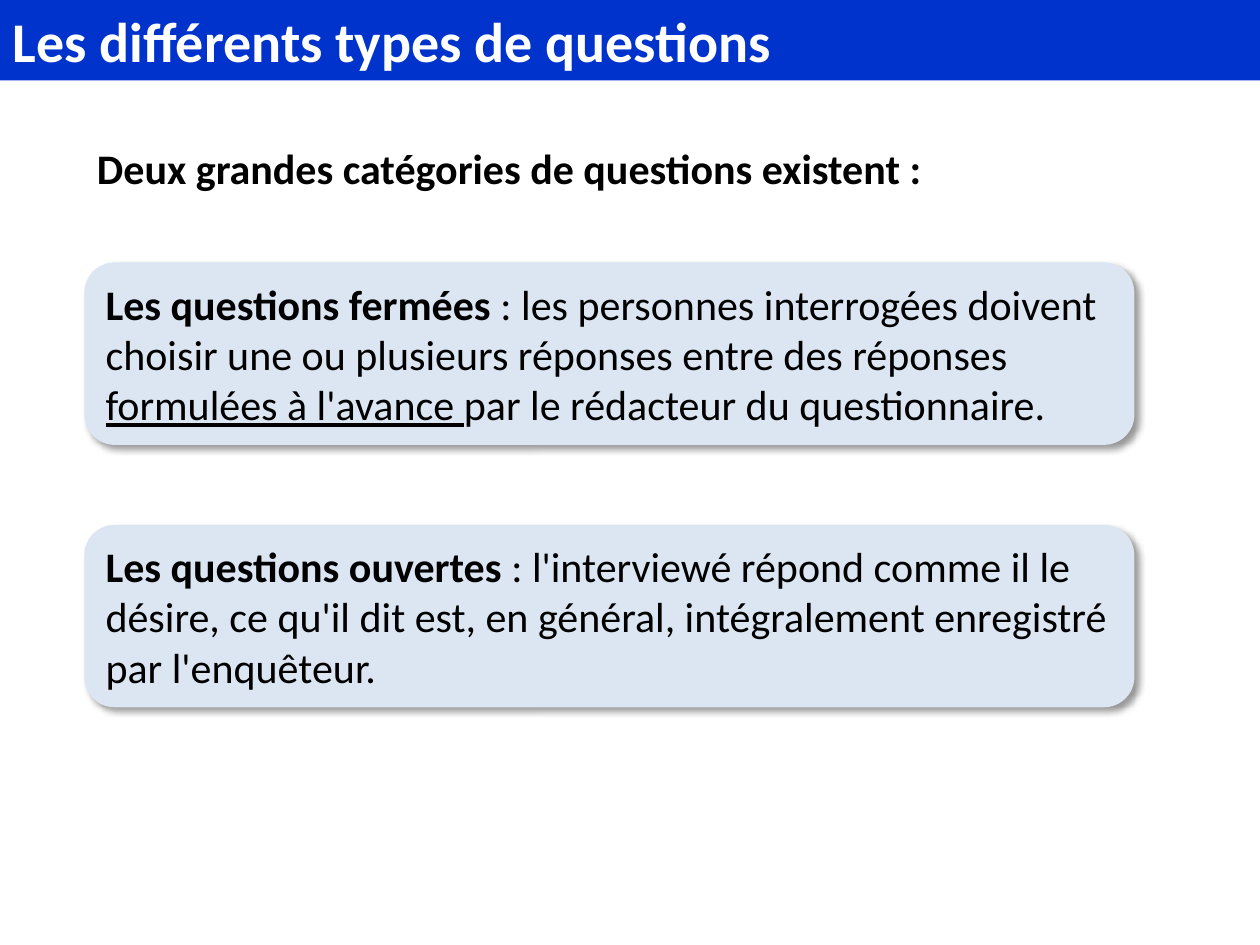
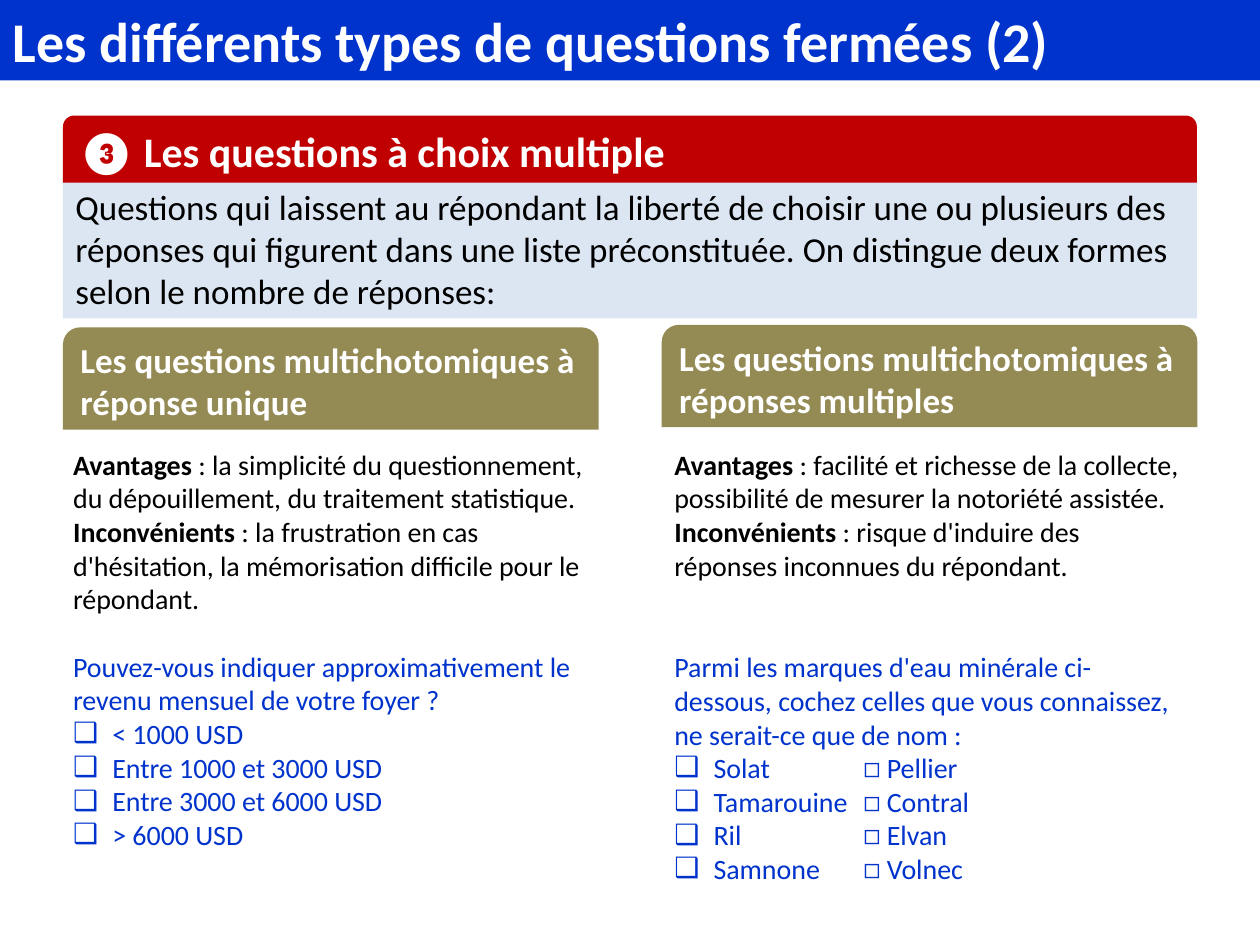
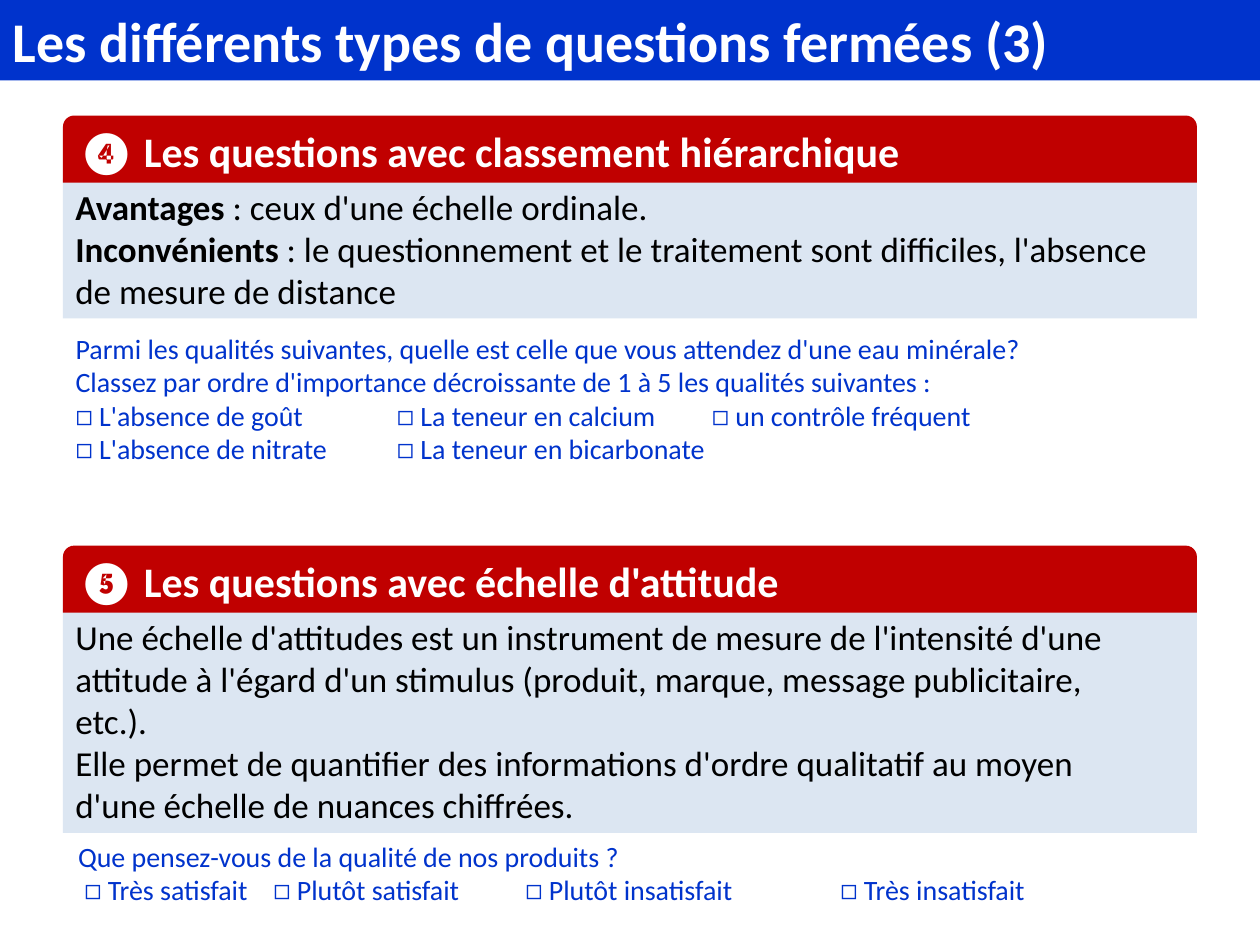
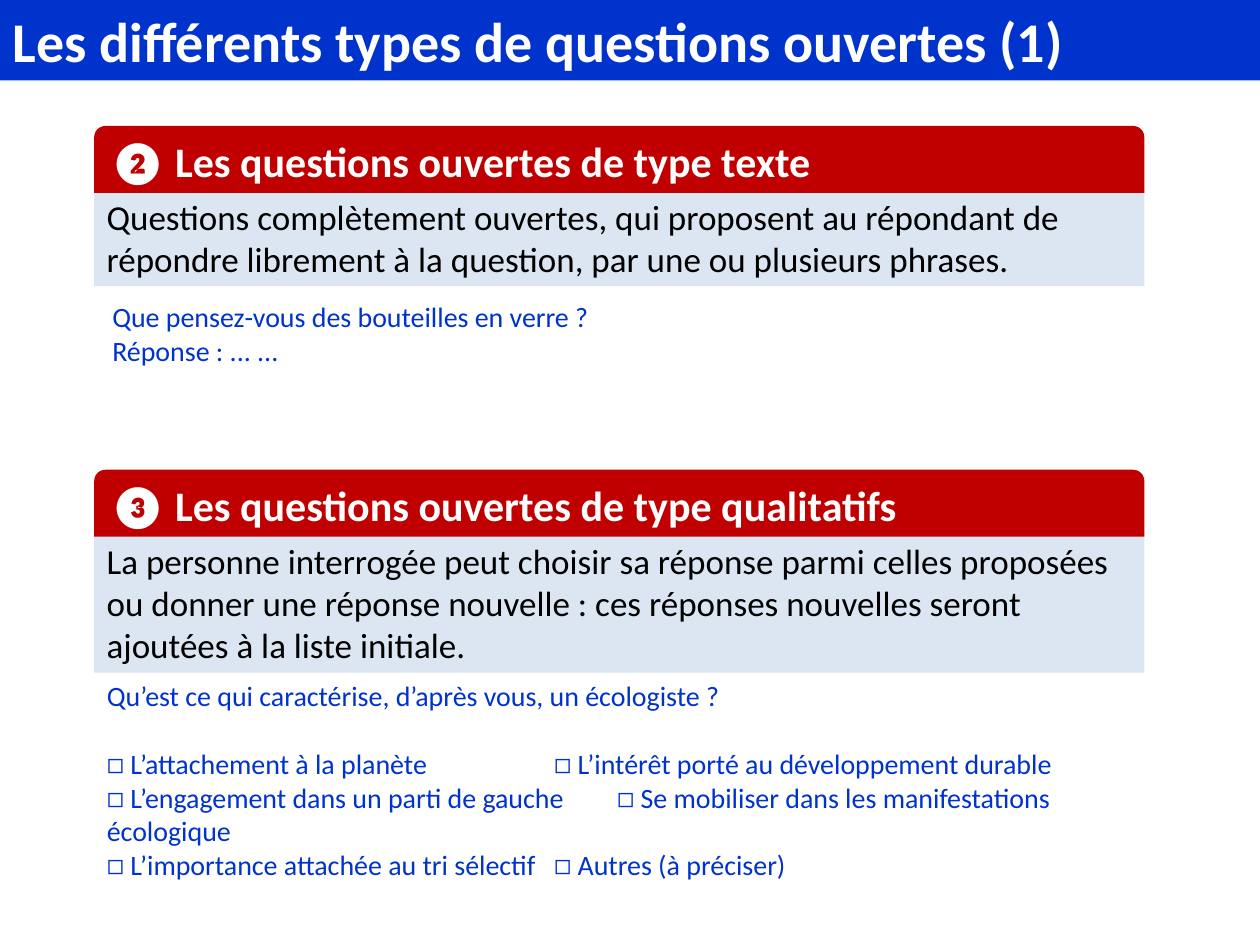
from dataclasses import dataclass
from typing import NamedTuple

from lxml import etree
from pptx import Presentation
from pptx.dml.color import RGBColor
from pptx.enum.shapes import MSO_SHAPE
from pptx.enum.text import MSO_ANCHOR, MSO_AUTO_SIZE, PP_ALIGN
from pptx.oxml.ns import qn
from pptx.util import Cm, Pt

RECT = MSO_SHAPE.RECTANGLE
ROUNDED = MSO_SHAPE.ROUNDED_RECTANGLE
TAB_TOP = MSO_SHAPE.ROUND_2_SAME_RECTANGLE
TOP, MIDDLE = MSO_ANCHOR.TOP, MSO_ANCHOR.MIDDLE
LEFT, NO_FIT = PP_ALIGN.LEFT, MSO_AUTO_SIZE.NONE

# Shared look
FONT = "Calibri"
BLUE, RED, OLIVE, PALE = "0033CC", "C00000", "948A54", "DCE6F2"
BLACK, WHITE = "000000", "FFFFFF"
SLIDE_WIDTH, SLIDE_HEIGHT = 25.4, 19.05
TITLE_HEIGHT = 1.62
HEADER_HEIGHT, PANEL_OFFSET = 1.35, 1.27
CHECKBOX, CHECKBOX_INDENT = "❑", 0.79
LINE_16PT = 19.5
TITLE_LAYOUTS = {1: 1, 2: 3}  # number of body texts -> template layout


class Box(NamedTuple):
    left: float
    top: float
    width: float
    height: float


class Run(NamedTuple):
    text: str
    bold: bool = False
    underline: bool = False


@dataclass
class Line:
    runs: list[Run]
    color: str = BLACK
    checkbox: bool = False
    before: float = 0


@dataclass
class Body:
    box: Box
    lines: list[Line]
    size: int = 16


@dataclass
class Section:
    """A red header sitting on a pale panel."""
    left: float
    top: float
    width: float
    panel_height: float
    heading: str
    lines: list[Line]


# Text builders
def plain(text: str, color: str = BLACK) -> Line:
    return Line([Run(text)], color)


def bold(text: str, color: str = BLACK) -> Line:
    return Line([Run(text, bold=True)], color)


def term(name: str, meaning: str) -> Line:
    return Line([Run(name, bold=True), Run(meaning)])


def ask(text: str, before: float = 0) -> Line:
    return Line([Run(text)], BLUE, before=before)


def choice(text: str) -> Line:
    return Line([Run(text)], BLUE, checkbox=True)


# Drawing
def rgb(color: str) -> RGBColor:
    return RGBColor.from_string(color)


def place(shape, box: Box) -> None:
    for side, length in box._asdict().items():
        setattr(shape, side, Cm(length))


def write(shape, lines: list[Line], size: int, anchor=TOP) -> None:
    frame = shape.text_frame
    frame_format = {"word_wrap": True, "auto_size": NO_FIT, "vertical_anchor": anchor}
    for name, value in frame_format.items():
        setattr(frame, name, value)
    for index, line in enumerate(lines):
        paragraph = frame.add_paragraph() if index else frame.paragraphs[0]
        spacing = {"alignment": LEFT, "space_before": Pt(line.before), "space_after": Pt(0)}
        for name, value in spacing.items():
            setattr(paragraph, name, value)
        set_bullet(paragraph, line.checkbox)
        for part in line.runs:
            run = paragraph.add_run()
            run.text = part.text
            font_format = {"name": FONT, "size": Pt(size),
                           "bold": part.bold, "underline": part.underline}
            for name, value in font_format.items():
                setattr(run.font, name, value)
            run.font.color.rgb = rgb(line.color)


def set_bullet(paragraph, checkbox: bool) -> None:
    properties = paragraph._p.get_or_add_pPr()
    indent = Cm(CHECKBOX_INDENT) if checkbox else 0
    properties.set("marL", str(int(indent)))
    properties.set("indent", str(-int(indent)))
    if checkbox:
        etree.SubElement(properties, qn("a:buChar"), char=CHECKBOX)
    else:
        etree.SubElement(properties, qn("a:buNone"))


def add_block(slide, kind, box: Box, fill: str, lines: list[Line], size: int):
    block = slide.shapes.add_shape(kind, *(Cm(length) for length in box))
    block.shadow.inherit = False
    block.fill.solid()
    block.fill.fore_color.rgb = rgb(fill)
    block.line.fill.background()
    write(block, lines, size, MIDDLE)
    return block


def add_card(slide, box: Box, lines: list[Line]) -> None:
    card = add_block(slide, ROUNDED, box, PALE, lines, 24)
    effects = card._element.spPr.find(qn("a:effectLst"))
    shadow = etree.SubElement(effects, qn("a:outerShdw"), blurRad=str(Pt(4)),
                              dist=str(Pt(3)), dir="2700000", algn="tl", rotWithShape="0")
    color = etree.SubElement(shadow, qn("a:srgbClr"), val=BLACK)
    etree.SubElement(color, qn("a:alpha"), val="40000")


def add_section(slide, section: Section) -> None:
    left, top, width = section.left, section.top, section.width
    add_block(slide, RECT, Box(left, top + PANEL_OFFSET, width, section.panel_height),
              PALE, section.lines, 20)
    add_block(slide, TAB_TOP, Box(left, top, width, HEADER_HEIGHT),
              RED, [bold(section.heading, WHITE)], 24)


def add_page(deck, title: str, bodies: list[Body], sections: list[Section]):
    slide = deck.slides.add_slide(deck.slide_layouts[TITLE_LAYOUTS[len(bodies)]])
    band = slide.shapes.title
    place(band, Box(0, 0, SLIDE_WIDTH, TITLE_HEIGHT))
    band.fill.solid()
    band.fill.fore_color.rgb = rgb(BLUE)
    write(band, [bold(title, WHITE)], 32, MIDDLE)
    for index, body in enumerate(bodies, start=1):
        placeholder = slide.placeholders[index]
        place(placeholder, body.box)
        write(placeholder, body.lines, body.size)
    for section in sections:
        add_section(slide, section)
    return slide


# Slides
def build_categories(deck) -> None:
    intro = Body(Box(1.7, 2.74, 19.48, 1.27),
                 [bold("Deux grandes catégories de questions existent :")], 24)
    slide = add_page(deck, "Les différents types de questions", [intro], [])
    closed = Line([
        Run("Les questions fermées ", bold=True),
        Run(": les personnes interrogées doivent choisir une ou plusieurs réponses "
            "entre des réponses "),
        Run("formulées à l'avance ", underline=True),
        Run("par le rédacteur du questionnaire."),
    ])
    opened = term("Les questions ouvertes ",
                  ": l'interviewé répond comme il le désire, ce qu'il dit est, "
                  "en général, intégralement enregistré par l'enquêteur.")
    for row, category in enumerate([closed, opened]):
        add_card(slide, Box(1.7, 5.29 + row * 5.29, 21.17, 3.68), [category])


def build_multiple_choice(deck) -> None:
    single_answer = Body(Box(1.22, 8.89, 10.85, 8.56), [
        term("Avantages", " : la simplicité du questionnement, du dépouillement, "
                          "du traitement statistique."),
        term("Inconvénients", " : la frustration en cas d'hésitation, la mémorisation "
                              "difficile pour le répondant."),
        ask("Pouvez-vous indiquer approximativement le revenu mensuel de votre foyer ?",
            before=LINE_16PT),
        *map(choice, ["< 1000 USD", "Entre 1000 et 3000 USD",
                      "Entre 3000 et 6000 USD", "> 6000 USD"]),
    ])
    several_answers = Body(Box(13.34, 8.89, 10.8, 9.14), [
        term("Avantages", " : facilité et richesse de la collecte, possibilité de "
                          "mesurer la notoriété assistée."),
        term("Inconvénients", " : risque d'induire des réponses inconnues du répondant."),
        ask("Parmi les marques d'eau minérale ci-dessous, cochez celles que vous "
            "connaissez,", before=2 * LINE_16PT),
        ask("ne serait-ce que de nom :"),
        *map(choice, ["Solat\t\t◻ Pellier", "Tamarouine\t◻ Contral",
                      "Ril\t\t◻ Elvan", "Samnone\t◻ Volnec"]),
    ])
    section = Section(1.27, 2.33, 22.86, 2.82, "❸ Les questions à choix multiple", [
        plain("Questions qui laissent au répondant la liberté de choisir une ou plusieurs "
              "des réponses qui figurent dans une liste préconstituée. On distingue deux "
              "formes selon le nombre de réponses:")])
    slide = add_page(deck, "Les différents types de questions fermées (2)",
                     [single_answer, several_answers], [section])
    for left, top, answers in [(1.27, 6.6, "réponse unique"),
                               (13.34, 6.55, "réponses multiples")]:
        heading = bold(f"Les questions multichotomiques à {answers}", WHITE)
        add_block(slide, TAB_TOP, Box(left, top, 10.8, 2.06), OLIVE, [heading], 20)


def build_ranking_and_scale(deck) -> None:
    ranking = Section(1.27, 2.33, 22.86, 2.82,
                      "❹ Les questions avec classement hiérarchique", [
        term("Avantages", " : ceux d'une échelle ordinale."),
        term("Inconvénients", " : le questionnement et le traitement sont difficiles, "
                              "l'absence de mesure de distance"),
    ])
    scale = Section(1.27, 11, 22.86, 4.52, "❺ Les questions avec échelle d'attitude", [
        plain("Une échelle d'attitudes est un instrument de mesure de l'intensité d'une"),
        plain("attitude à l'égard d'un stimulus (produit, marque, message publicitaire,"),
        plain("etc.)."),
        plain("Elle permet de quantifier des informations d'ordre qualitatif au moyen"),
        plain("d'une échelle de nuances chiffrées."),
    ])
    water_qualities = Body(Box(1.27, 6.55, 22.91, 3), [
        ask("Parmi les qualités suivantes, quelle est celle que vous attendez d'une "
            "eau minérale?"),
        ask("Classez par ordre d'importance décroissante de 1 à 5 les qualités suivantes :"),
        ask("◻ L'absence de goût \t\t ◻ La teneur en calcium\t ◻ un contrôle fréquent"),
        ask("◻ L'absence de nitrate \t ◻ La teneur en bicarbonate"),
    ])
    satisfaction = Body(Box(1.32, 16.79, 22.86, 1.62), [
        ask("Que pensez-vous de la qualité de nos produits ?"),
        ask(" ◻ Très satisfait\t ◻ Plutôt satisfait\t ◻ Plutôt insatisfait"
            "\t\t ◻ Très insatisfait"),
    ])
    add_page(deck, "Les différents types de questions fermées (3)",
             [water_qualities, satisfaction], [ranking, scale])


def build_open_questions(deck) -> None:
    free_text = Section(1.9, 2.54, 21.17, 1.96, "❷ Les questions ouvertes de type texte", [
        plain("Questions complètement ouvertes, qui proposent au répondant de"),
        plain("répondre librement à la question, par une ou plusieurs phrases."),
    ])
    qualitative = Section(1.9, 9.47, 21.17, 2.82,
                          "❸ Les questions ouvertes de type qualitatifs", [
        plain("La personne interrogée peut choisir sa réponse parmi celles proposées ou "
              "donner une réponse nouvelle : ces réponses nouvelles seront ajoutées à la "
              "liste initiale."),
    ])
    bottles = Body(Box(2.01, 5.92, 20.96, 1.62), [
        ask("Que pensez-vous des bouteilles en verre ?"),
        ask("Réponse : ... ..."),
    ])
    ecologist = Body(Box(1.9, 13.56, 21.8, 4.37), [
        ask("Qu’est ce qui caractérise, d’après vous, un écologiste ?"),
        ask("◻ L’attachement à la planète\t\t ◻ L’intérêt porté au développement durable",
            before=LINE_16PT),
        ask("◻ L’engagement dans un parti de gauche\t ◻ Se mobiliser dans les "
            "manifestations écologique"),
        ask("◻ L’importance attachée au tri sélectif\t ◻ Autres (à préciser)"),
    ])
    add_page(deck, "Les différents types de questions ouvertes (1)",
             [bottles, ecologist], [free_text, qualitative])


def main() -> None:
    deck = Presentation()
    deck.slide_width, deck.slide_height = Cm(SLIDE_WIDTH), Cm(SLIDE_HEIGHT)
    for build in (build_categories, build_multiple_choice,
                  build_ranking_and_scale, build_open_questions):
        build(deck)
    deck.save("out.pptx")


if __name__ == "__main__":
    main()
